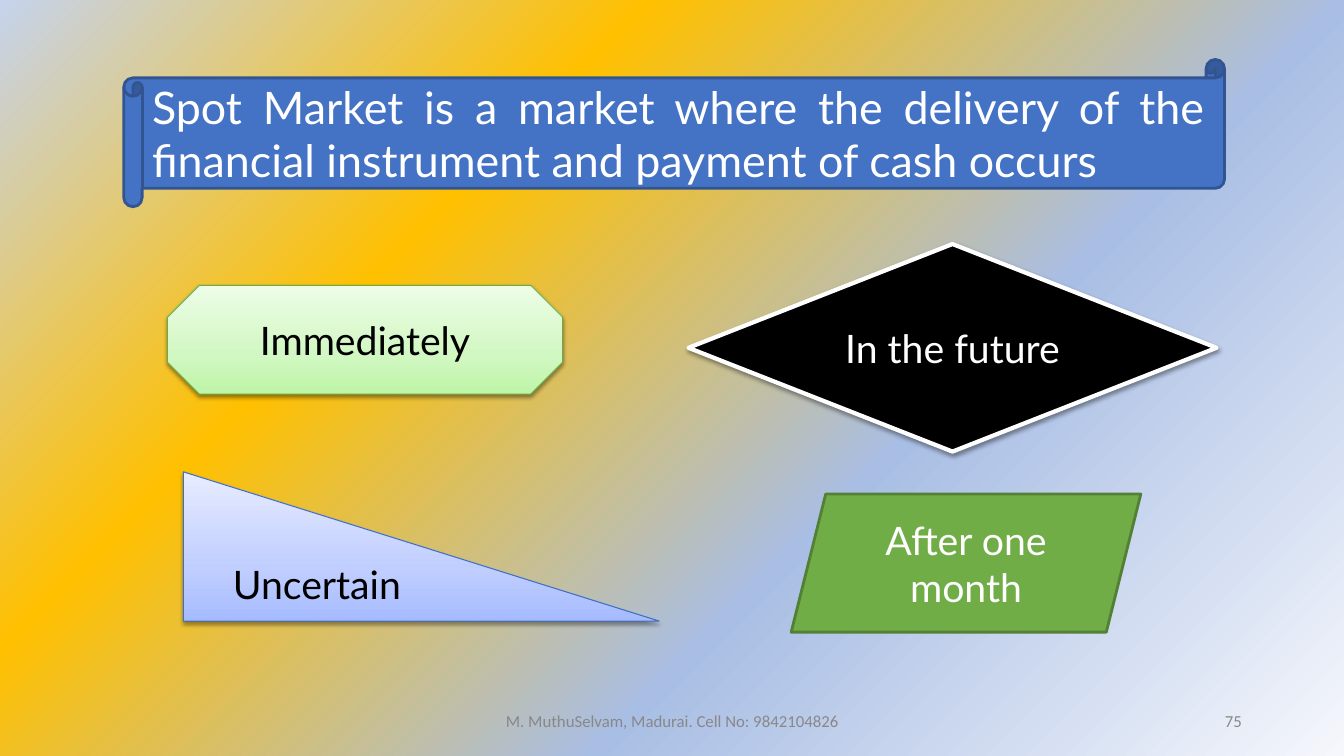
from dataclasses import dataclass

from lxml import etree
from pptx import Presentation
from pptx.dml.color import RGBColor
from pptx.enum.shapes import MSO_SHAPE
from pptx.enum.text import MSO_ANCHOR, PP_ALIGN
from pptx.oxml.ns import qn
from pptx.util import Cm, Pt


@dataclass(frozen=True)
class Theme:
    font: str = "Lato"
    footer_font: str = "Calibri"
    title_size: int = 32
    answer_size: int = 28
    footer_size: int = 12
    white: str = "FFFFFF"
    black: str = "000000"
    grey: str = "888888"
    blue: str = "4472C4"
    blue_line: str = "325491"
    green: str = "70AD47"
    green_line: str = "538035"
    mint_line: str = "6DAC43"
    lilac_line: str = "3F6FC3"
    mint: tuple = ((0, "BEF5A7"), (35, "D1F7C2"), (100, "EDFDE7"))
    lilac: tuple = ((0, "A6BBFF"), (35, "C0CEFF"), (100, "E7ECFF"))
    backdrop: tuple = ((0, "F5F7FC"), (36, "A9BEE4"), (69, "FFC000"), (100, "C5D3ED"))


T = Theme()


def set_gradient(fill, root, stops, radial=False):
    """Fill with stops running upwards, or outwards from the bottom right corner."""
    fill.gradient()
    grad = next(root.iter(qn("a:gradFill")))
    for child in list(grad):
        grad.remove(child)
    stop_list = etree.SubElement(grad, qn("a:gsLst"))
    for percent, color in stops:
        gs = etree.SubElement(stop_list, qn("a:gs"), pos=str(percent * 1000))
        etree.SubElement(gs, qn("a:srgbClr"), val=color)
    if radial:
        shade = etree.SubElement(grad, qn("a:path"), {"path": "circle"})
        etree.SubElement(shade, qn("a:fillToRect"), l="100000", t="100000")
    else:
        etree.SubElement(grad, qn("a:lin"), ang="16200000", scaled="0")


def write_text(sp, text, align, **font):
    tf = sp.text_frame
    tf.word_wrap = True
    tf.vertical_anchor = MSO_ANCHOR.MIDDLE
    p = tf.paragraphs[0]
    p.alignment = align
    r = p.add_run()
    r.text = text
    r.font.color.rgb = RGBColor.from_string(font.pop("color"))
    for name, value in font.items():
        setattr(r.font, name, value)


prs = Presentation()
prs.slide_width, prs.slide_height = Cm(33.87), Cm(19.05)
s = prs.slides.add_slide(prs.slide_layouts[6])
set_gradient(s.background.fill, s.element, T.backdrop, radial=True)

# kind, box, fill, line, line width, shadow, text, alignment, size, text colour
shapes = [
    (MSO_SHAPE.HORIZONTAL_SCROLL, (3.12, 1.5, 27.74, 3.71), T.blue, T.blue_line, 2, False,
     "Spot Market is a market where the delivery of the financial instrument "
     "and payment of cash occurs", PP_ALIGN.JUSTIFY, T.title_size, T.white),
    (MSO_SHAPE.OCTAGON, (4.22, 7.19, 9.96, 2.74), T.mint, T.mint_line, 0.75, True,
     "Immediately", PP_ALIGN.CENTER, T.answer_size, T.black),
    (MSO_SHAPE.DIAMOND, (17.35, 6.15, 13.31, 5.23), T.black, T.white, 3, True,
     "In the future", PP_ALIGN.CENTER, T.answer_size, T.white),
    (MSO_SHAPE.RIGHT_TRIANGLE, (4.62, 11.89, 11.99, 3.76), T.lilac, T.lilac_line, 0.75, True,
     "Uncertain", PP_ALIGN.JUSTIFY, T.answer_size, T.black),
    (MSO_SHAPE.PARALLELOGRAM, (19.94, 12.45, 8.81, 3.48), T.green, T.green_line, 2, False,
     "After one month", PP_ALIGN.CENTER, T.answer_size, T.white),
]
for kind, box, fill, line, width, shadow, text, align, size, color in shapes:
    sp = s.shapes.add_shape(kind, *map(Cm, box))
    if isinstance(fill, tuple):
        set_gradient(sp.fill, sp.element, fill)
    else:
        sp.fill.solid()
        sp.fill.fore_color.rgb = RGBColor.from_string(fill)
    sp.line.color.rgb = RGBColor.from_string(line)
    sp.line.width = Pt(width)
    sp.shadow.inherit = False
    if shadow:
        effects = next(sp.element.iter(qn("a:effectLst")))
        outer = etree.SubElement(
            effects, qn("a:outerShdw"), blurRad=str(Pt(3.1)), dist=str(Pt(1.6)),
            dir="5400000", rotWithShape="0")
        tint = etree.SubElement(outer, qn("a:srgbClr"), val=T.black)
        etree.SubElement(tint, qn("a:alpha"), val="38000")
    write_text(sp, text, align, name=T.font, size=Pt(size), color=color)

footers = [
    (11.23, 11.43, "M. MuthuSelvam, Madurai. Cell No: 9842104826", PP_ALIGN.CENTER),
    (23.93, 7.62, "75", PP_ALIGN.RIGHT),
]
for left, width, text, align in footers:
    sp = s.shapes.add_textbox(Cm(left), Cm(17.65), Cm(width), Cm(1.02))
    write_text(sp, text, align, name=T.footer_font, size=Pt(T.footer_size), color=T.grey)

prs.save("out.pptx")
